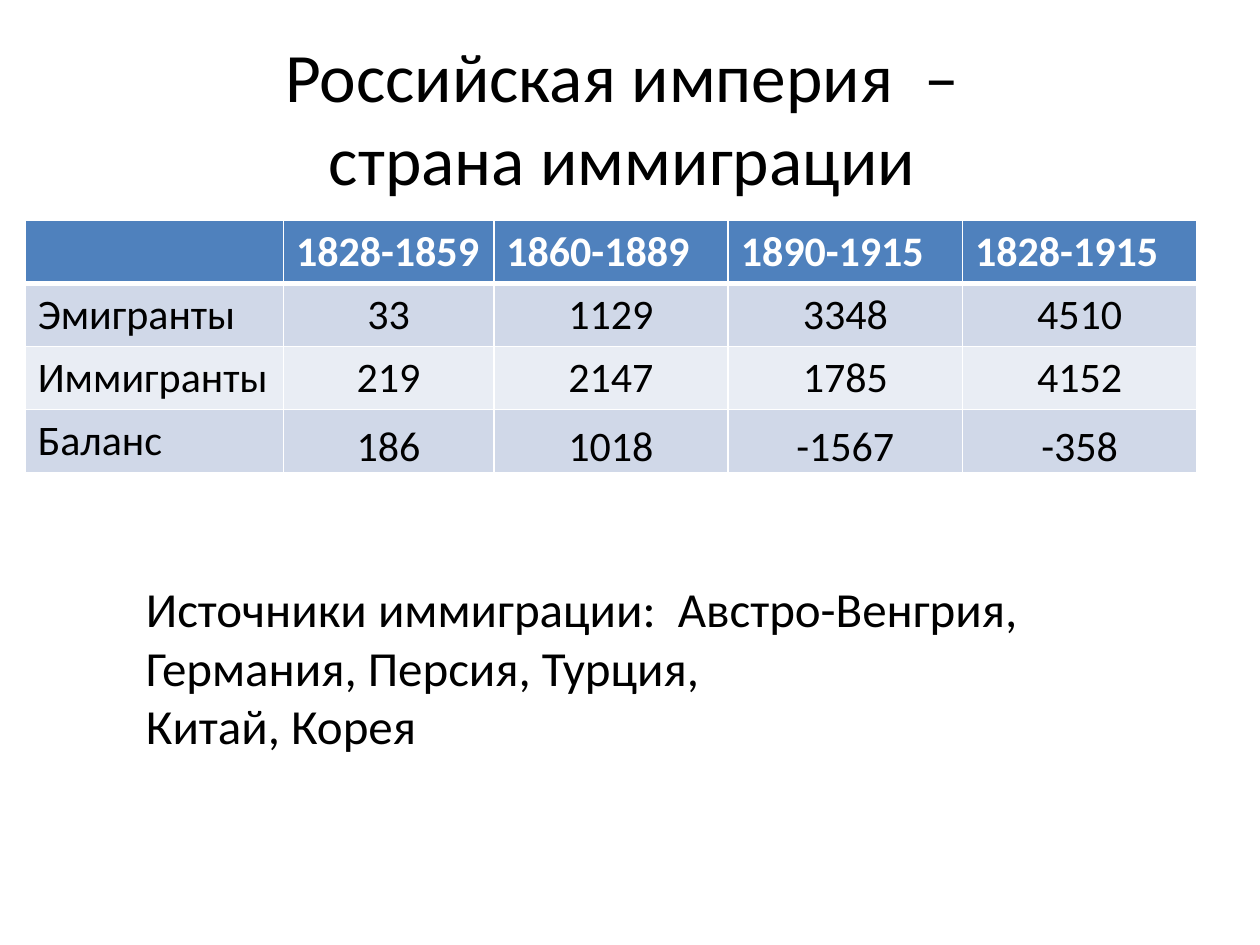
import pptx
import pptx.dml.color
import pptx.enum.text
import pptx.oxml
import pptx.oxml.ns
import pptx.util

Inches = pptx.util.Inches
ALIGN = pptx.enum.text.PP_ALIGN
ANCHOR = pptx.enum.text.MSO_ANCHOR

COLORS = {"text": "000000", "header": "4F81BD", "header_text": "FFFFFF",
          "odd_row": "D0D8E8", "even_row": "E9EDF4", "border": "FFFFFF"}
FONT = "Calibri"

TITLE = "Российская империя  – \vстрана иммиграции "
ROWS = [
    ["", "1828-1859", "1860-1889", "1890-1915", "1828-1915"],
    ["Эмигранты", "33", "1129", "3348", "4510"],
    ["Иммигранты", "219", "2147", "1785", "4152"],
    ["Баланс", "186", "1018", "-1567", "-358"],
]
COLUMN_WIDTHS = [2.05, 1.67, 1.86, 1.86, 1.86]
SOURCES = ["Источники иммиграции:  Австро-Венгрия, Германия, Персия, Турция,",
           "Китай, Корея"]


def rgb(name):
    return pptx.dml.color.RGBColor.from_string(COLORS[name])


def set_attributes(target, values):
    for name, value in values.items():
        setattr(target, name, value)


def format_text(text_frame, size, color="text", bold=False, align=ALIGN.LEFT):
    for paragraph in text_frame.paragraphs:
        paragraph.alignment = align
        for font in [paragraph.font] + [run.font for run in paragraph.runs]:
            set_attributes(font, {"name": FONT, "size": pptx.util.Pt(size), "bold": bold})
            font.color.rgb = rgb(color)


def set_borders(cell, bottom_width):
    """Border lines must come before the fill in the cell properties."""
    properties = cell._tc.get_or_add_tcPr()
    widths = {"lnL": 1, "lnR": 1, "lnT": 1, "lnB": bottom_width}
    for position, (side, width) in enumerate(widths.items()):
        line = pptx.oxml.parse_xml(
            f'<a:{side} {pptx.oxml.ns.nsdecls("a")} w="{pptx.util.Pt(width)}">'
            f'<a:solidFill><a:srgbClr val="{COLORS["border"]}"/></a:solidFill></a:{side}>')
        properties.insert(position, line)


def add_text(slide, box, text, size, anchor=ANCHOR.TOP, align=ALIGN.LEFT):
    text_frame = slide.shapes.add_textbox(*map(Inches, box)).text_frame
    set_attributes(text_frame, {"word_wrap": True, "vertical_anchor": anchor, "text": text})
    format_text(text_frame, size, align=align)


def add_migration_table(slide, box):
    shape = slide.shapes.add_table(len(ROWS), len(COLUMN_WIDTHS), *map(Inches, box))
    table = shape.table
    for column, width in zip(table.columns, COLUMN_WIDTHS):
        column.width = Inches(width)
    last = len(ROWS) - 1
    for row_index, row in enumerate(ROWS):
        is_header = row_index == 0
        fill = "header" if is_header else "odd_row" if row_index % 2 else "even_row"
        for column_index, text in enumerate(row):
            is_value = not is_header and column_index > 0
            cell = table.cell(row_index, column_index)
            cell.text = text
            cell.fill.solid()
            cell.fill.fore_color.rgb = rgb(fill)
            set_borders(cell, 3 if is_header else 1)
            format_text(cell.text_frame, 24, "header_text" if is_header else "text",
                        is_header, ALIGN.CENTER if is_value else ALIGN.LEFT)
            if is_value and row_index == last:
                margin = Inches(0.01)
                set_attributes(cell, {"vertical_anchor": ANCHOR.BOTTOM,
                                      "margin_left": margin, "margin_right": margin,
                                      "margin_top": margin, "margin_bottom": 0})


def main():
    presentation = pptx.Presentation()
    set_attributes(presentation, {"slide_width": Inches(10), "slide_height": Inches(7.5)})
    slide = presentation.slides.add_slide(presentation.slide_layouts[6])
    add_text(slide, (0.5, 0.3, 9, 1.25), TITLE, 39.6, ANCHOR.MIDDLE, ALIGN.CENTER)
    add_migration_table(slide, (0.2, 1.75, sum(COLUMN_WIDTHS), 2))
    add_text(slide, (1.06, 4.54, 7.62, 1.51), "\n".join(SOURCES), 28)
    presentation.save("out.pptx")


if __name__ == "__main__":
    main()
